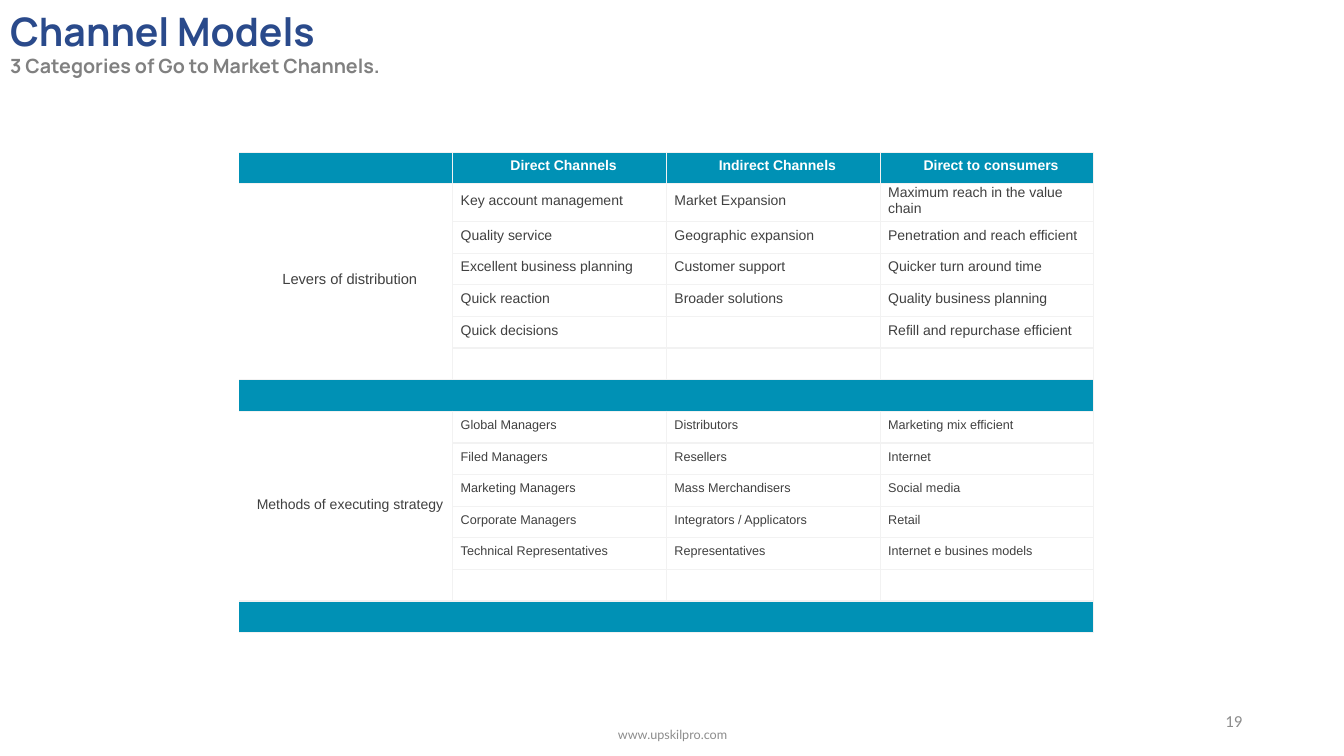
from lxml import etree
from pptx import Presentation
from pptx.dml.color import RGBColor
from pptx.enum import text as t
from pptx.oxml import ns
from pptx.util import Inches, Pt

TEAL, RULE, INK, GREY = "0091B5", "F2F2F2", "404040", "8C8C8C"
COLS, ROWS = 4, 15
HEAD = ["", "Direct Channels", "Indirect Channels", "Direct to consumers"]
# Each section: label, label size, item size, rows of items
PARTS = [
    ("Levers of distribution", 10.5, 10, [
        ("Key account management", "Market Expansion", "Maximum reach in the value chain"),
        ("Quality service", "Geographic expansion", "Penetration and reach efficient"),
        ("Excellent business planning", "Customer support", "Quicker turn around time"),
        ("Quick reaction", "Broader solutions", "Quality business planning"),
        ("Quick decisions", "", "Refill and repurchase efficient"),
        ("", "", ""),
    ]),
    ("Methods of executing strategy", 10, 9, [
        ("Global Managers", "Distributors", "Marketing mix efficient"),
        ("Filed Managers", "Resellers", "Internet"),
        ("Marketing Managers", "Mass Merchandisers", "Social media"),
        ("Corporate Managers", "Integrators / Applicators", "Retail"),
        ("Technical Representatives", "Representatives", "Internet e busines models"),
        ("", "", ""),
    ]),
]


def rgb(code):
    return RGBColor.from_string(code)


def write(para, words, size, font, color, bold=False, align=t.PP_ALIGN.LEFT):
    para.alignment = align
    run = para.add_run()
    run.text = words
    face = run.font
    face.size, face.name, face.bold = Pt(size), font, bold
    face.color.rgb = rgb(color)


def border(cell, first):
    props = cell._tc.get_or_add_tcPr()
    for side in ("lnL", "lnR", "lnT", "lnB"):
        line = etree.SubElement(props, ns.qn("a:" + side), w=str(Pt(1)))
        if first and side == "lnL":
            etree.SubElement(line, ns.qn("a:noFill"))
        else:
            fill = etree.SubElement(line, ns.qn("a:solidFill"))
            etree.SubElement(fill, ns.qn("a:srgbClr"), val=RULE)


def style(cell, first):
    border(cell, first)
    cell.fill.background()
    cell.vertical_anchor = t.MSO_ANCHOR.MIDDLE
    cell.margin_left, cell.margin_right = Inches(0.08), 0
    cell.margin_top, cell.margin_bottom = 0, Inches(0.04)


def paint(cell):
    cell.fill.solid()
    cell.fill.fore_color.rgb = rgb(TEAL)


def put(cell, words, size, color=INK, bold=False, align=t.PP_ALIGN.LEFT):
    para = cell.text_frame.paragraphs[0]
    if words:
        write(para, words, size, "Arial", color, bold, align)
    else:
        # Keep empty cells from stretching their row
        etree.SubElement(para._p, ns.qn("a:endParaRPr"), sz=str(size * 100))


def title(slide, x, y, w, h):
    shape = slide.shapes.title
    shape.left, shape.top, shape.width, shape.height = map(Inches, (x, y, w, h))
    frame = shape.text_frame
    frame.word_wrap = True
    frame.auto_size = t.MSO_AUTO_SIZE.SHAPE_TO_FIT_TEXT
    frame.vertical_anchor = t.MSO_ANCHOR.TOP
    write(frame.paragraphs[0], "Channel Models", 28, "Manrope", "2A4A8B", True)
    write(frame.add_paragraph(), "3 Categories of Go to Market Channels.",
          14, "Manrope", "808080", True)


def matrix(slide, x, y, w, h):
    grid = slide.shapes.add_table(ROWS, COLS, *map(Inches, (x, y, w, h))).table
    grid.first_row = grid.horz_banding = False
    for row in grid.rows:
        row.height = Inches(h / ROWS)
    for r in range(ROWS):
        for c in range(COLS):
            style(grid.cell(r, c), c == 0)

    # Header
    for c, words in enumerate(HEAD):
        paint(grid.cell(0, c))
        put(grid.cell(0, c), words, 10, "FFFFFF", True, t.PP_ALIGN.CENTER)

    # Sections, each closed by a full-width band
    top = 1
    for label, big, small, items in PARTS:
        end = top + len(items)
        side = grid.cell(top, 0)
        side.merge(grid.cell(end - 1, 0))
        put(side, label, big, align=t.PP_ALIGN.CENTER)
        for r, row in enumerate(items, top):
            for c, words in enumerate(row, 1):
                put(grid.cell(r, c), words, small)
        band = grid.cell(end, 0)
        band.merge(grid.cell(end, COLS - 1))
        paint(band)
        put(band, "", 10)
        top = end + 1


def note(slide, x, y, w, h, words, size, font, align):
    frame = slide.shapes.add_textbox(*map(Inches, (x, y, w, h))).text_frame
    frame.word_wrap = True
    frame.vertical_anchor = t.MSO_ANCHOR.MIDDLE
    write(frame.paragraphs[0], words, size, font, GREY, align=align)


def main():
    deck = Presentation()
    deck.slide_width, deck.slide_height = Inches(13.33), Inches(7.5)
    slide = deck.slides.add_slide(deck.slide_layouts[5])
    matrix(slide, 2.37, 1.51, 8.48, 4.71)
    title(slide, 0, 0.02, 5.26, 0.81)
    # Footer
    note(slide, 9.42, 6.95, 3, 0.4, "19", 12, "Calibri", t.PP_ALIGN.RIGHT)
    note(slide, 4.42, 7.09, 4.5, 0.4, "www.upskilpro.com", 9, "Lato", t.PP_ALIGN.CENTER)
    deck.save("out.pptx")


if __name__ == "__main__":
    main()
